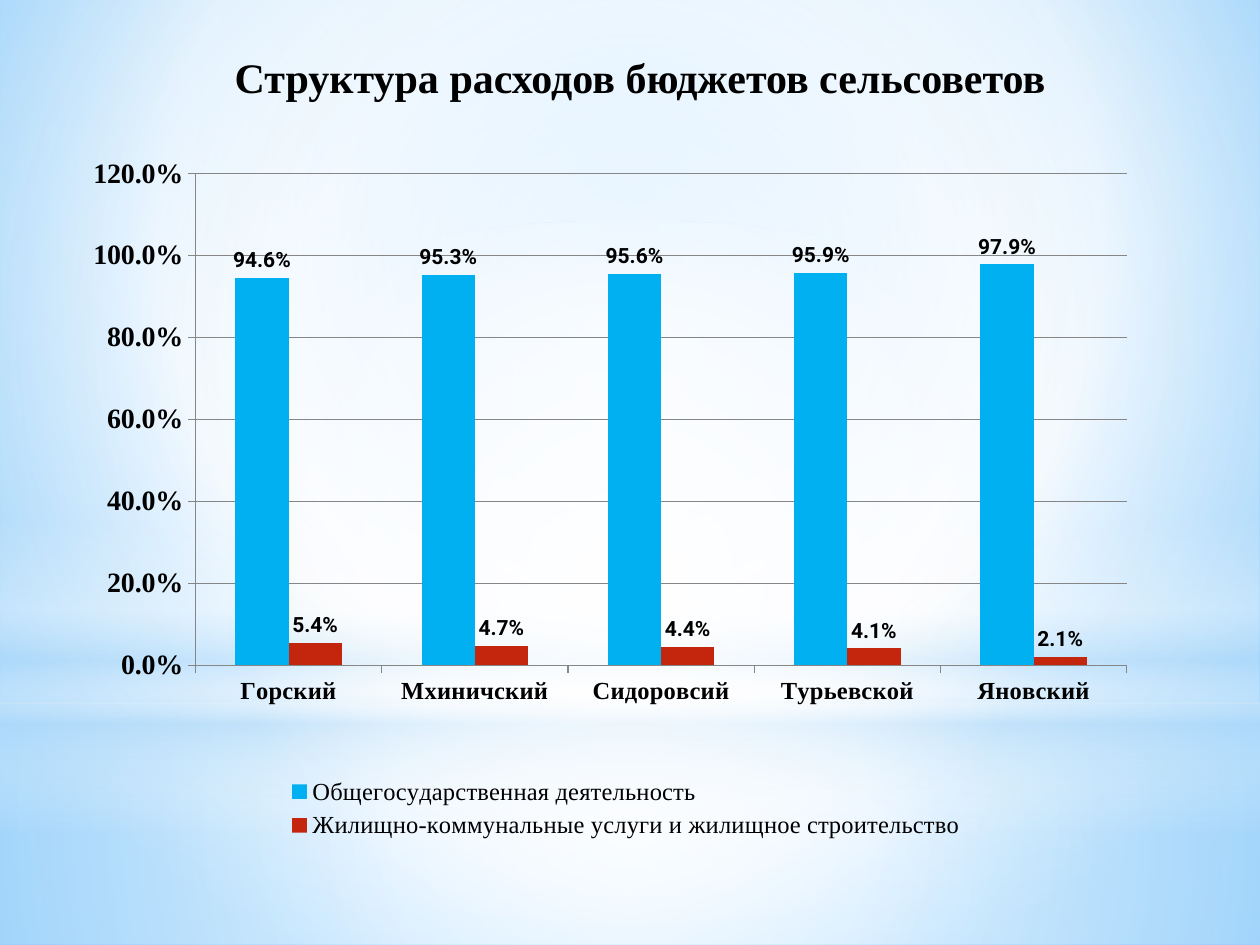
from dataclasses import dataclass

from lxml import etree
from pptx import Presentation
from pptx import util as u
from pptx.chart.data import CategoryChartData
from pptx.dml.color import RGBColor
from pptx.enum import chart as charts, shapes, text
from pptx.oxml import parse_xml
from pptx.oxml.ns import nsdecls, qn


@dataclass(frozen=True)
class Theme:
    serif: str = "Times New Roman"
    sans: str = "Roboto"
    ink: str = "000000"
    grid: str = "868686"
    white: str = "FFFFFF"
    haze: str = "B4DCFA"
    title_size: int = 24
    value_size: int = 16
    category_size: int = 14
    label_size: int = 12


@dataclass(frozen=True)
class Stop:
    position: int
    color: str
    alpha: int = 100


@dataclass(frozen=True)
class Gradient:
    stops: tuple[Stop, ...]
    focus: tuple[int, int, int, int] = (50, 50, 50, 50)
    angle: int | None = None  # linear when given, otherwise circular


@dataclass(frozen=True)
class Glow:
    kind: shapes.MSO_SHAPE
    top: float
    height: float
    gradient: Gradient


@dataclass(frozen=True)
class Series:
    name: str
    values: tuple[float, ...]
    color: str


THEME = Theme()
WHITE, HAZE = THEME.white, THEME.haze
RECTANGLE, OVAL = shapes.MSO_SHAPE.RECTANGLE, shapes.MSO_SHAPE.OVAL
PERCENT = "0.0%"

BACKGROUND = Gradient(
    (Stop(0, "9ED5FF"), Stop(60, WHITE), Stop(100, "5BB9FF")), (20, 10, 20, 60))
GLOWS = (
    Glow(RECTANGLE, 5.58, 1.92, Gradient(
        (Stop(0, WHITE, 91), Stop(37, WHITE, 76), Stop(100, HAZE, 79)))),
    Glow(RECTANGLE, 0, 5.58, Gradient(
        (Stop(0, WHITE, 89), Stop(48, WHITE, 62), Stop(100, HAZE, 79)))),
    Glow(RECTANGLE, 4.12, 2.5, Gradient(
        (Stop(0, WHITE, 0), Stop(29, WHITE, 30), Stop(45, HAZE, 40),
         Stop(55, WHITE, 26), Stop(65, HAZE, 60), Stop(100, WHITE, 0)), angle=90)),
    Glow(OVAL, 1.75, 5.58, Gradient((Stop(0, WHITE), Stop(56, WHITE, 0)))),
)
CATEGORIES = ("Горский", "Мхиничский", "Сидоровсий", "Турьевской", "Яновский")
SERIES = (
    Series("Общегосударственная деятельность",
           (0.946, 0.953, 0.956, 0.959, 0.979), "00B0F0"),
    Series("Жилищно-коммунальные услуги и жилищное строительство",
           (0.054, 0.047, 0.044, 0.041, 0.021), "C3260C"),
)


def apply_gradient(fill, owner, gradient: Gradient) -> None:
    """Give the fill inside the owner element the described gradient."""
    fill.gradient()
    stops = "".join(
        f'<a:gs pos="{stop.position * 1000}"><a:srgbClr val="{stop.color}">'
        f'<a:alpha val="{stop.alpha * 1000}"/></a:srgbClr></a:gs>'
        for stop in gradient.stops)
    if gradient.angle is None:
        sides = " ".join(f'{side}="{value * 1000}"'
                         for side, value in zip("ltrb", gradient.focus))
        direction = f'<a:path path="circle"><a:fillToRect {sides}/></a:path>'
    else:
        direction = f'<a:lin ang="{gradient.angle * 60000}" scaled="0"/>'
    old = owner.xpath(".//a:gradFill")[0]
    old.getparent().replace(old, parse_xml(
        f'<a:gradFill {nsdecls("a")} rotWithShape="1">'
        f"<a:gsLst>{stops}</a:gsLst>{direction}</a:gradFill>"))


def add_glow(slide, glow: Glow) -> None:
    shape = slide.shapes.add_shape(
        glow.kind, 0, u.Inches(glow.top), u.Inches(10), u.Inches(glow.height))
    shape.shadow.inherit = False
    shape.line.fill.background()
    apply_gradient(shape.fill, shape.element, glow.gradient)


def style_font(font, name: str, size: int, bold: bool = False) -> None:
    font.name, font.size, font.bold = name, u.Pt(size), bold
    font.color.rgb = RGBColor.from_string(THEME.ink)


def manual_layout(box: tuple[float, ...], inner: bool = False):
    """Return a chart layout given as fractions of the chart area."""
    layout = parse_xml(f'<c:layout {nsdecls("c")}><c:manualLayout/></c:layout>')
    settings = [("layoutTarget", "inner")] if inner else []
    settings += [("xMode", "edge"), ("yMode", "edge"), *zip("xywh", box)]
    for tag, value in settings:
        etree.SubElement(layout[0], qn(f"c:{tag}")).set("val", str(value))
    return layout


def add_spending_chart(slide) -> None:
    data = CategoryChartData(number_format=PERCENT)
    data.categories = CATEGORIES
    for series in SERIES:
        data.add_series(series.name, series.values)
    chart = slide.shapes.add_chart(
        charts.XL_CHART_TYPE.COLUMN_CLUSTERED, u.Inches(0.35), u.Inches(0.99),
        u.Inches(9.24), u.Inches(6.5), data).chart
    chart.has_title = False
    style_font(chart.font, THEME.sans, 10)

    # Columns and their labels
    plot = chart.plots[0]
    plot.gap_width, plot.overlap, plot.vary_by_categories = 150, 0, False
    for columns, series in zip(plot.series, SERIES):
        columns.format.fill.solid()
        columns.format.fill.fore_color.rgb = RGBColor.from_string(series.color)
        labels = columns.data_labels
        labels.show_value = True
        labels.number_format, labels.number_format_is_linked = PERCENT, False
        labels.position = charts.XL_LABEL_POSITION.OUTSIDE_END
        style_font(labels.font, THEME.sans, THEME.label_size, True)

    # Axes and gridlines
    values = chart.value_axis
    values.minimum_scale, values.maximum_scale, values.major_unit = 0, 1.2, 0.2
    values.tick_labels.number_format = PERCENT
    values.tick_labels.number_format_is_linked = False
    values.has_major_gridlines = True
    for axis, size in ((chart.category_axis, THEME.category_size),
                       (values, THEME.value_size)):
        axis.major_tick_mark = charts.XL_TICK_MARK.OUTSIDE
        style_font(axis.tick_labels.font, THEME.serif, size, True)
    for lined in (chart.category_axis, values, values.major_gridlines):
        lined.format.line.width = u.Pt(0.75)
        lined.format.line.color.rgb = RGBColor.from_string(THEME.grid)

    # Legend and placement
    chart.has_legend = True
    legend = chart.legend
    legend.position = charts.XL_LEGEND_POSITION.BOTTOM
    legend.include_in_layout = False
    style_font(legend.font, THEME.serif, THEME.category_size)
    area = chart.element.xpath(".//c:plotArea")[0]
    legend_element = chart.element.xpath(".//c:legend")[0]
    for parent in (area, legend_element):
        for layout in parent.findall(qn("c:layout")):
            parent.remove(layout)
    area.insert(0, manual_layout((0.13, 0.06, 0.8, 0.6), inner=True))
    legend_element.find(qn("c:legendPos")).addnext(
        manual_layout((0.2, 0.79, 0.6, 0.09)))


def add_title(slide) -> None:
    box = slide.shapes.add_textbox(
        u.Inches(0.83), u.Inches(0.36), u.Inches(8.5), u.Inches(0.5))
    box.text_frame.word_wrap = True
    box.text_frame.auto_size = text.MSO_AUTO_SIZE.SHAPE_TO_FIT_TEXT
    paragraph = box.text_frame.paragraphs[0]
    paragraph.alignment = text.PP_ALIGN.CENTER
    run = paragraph.add_run()
    run.text = "Структура расходов бюджетов сельсоветов"
    style_font(run.font, THEME.serif, THEME.title_size, True)


def main() -> None:
    presentation = Presentation()
    presentation.slide_width, presentation.slide_height = u.Inches(10), u.Inches(7.5)
    slide = presentation.slides.add_slide(presentation.slide_layouts[6])
    apply_gradient(slide.background.fill, slide.element, BACKGROUND)
    for glow in GLOWS:
        add_glow(slide, glow)
    add_spending_chart(slide)
    add_title(slide)
    presentation.save("out.pptx")


if __name__ == "__main__":
    main()
